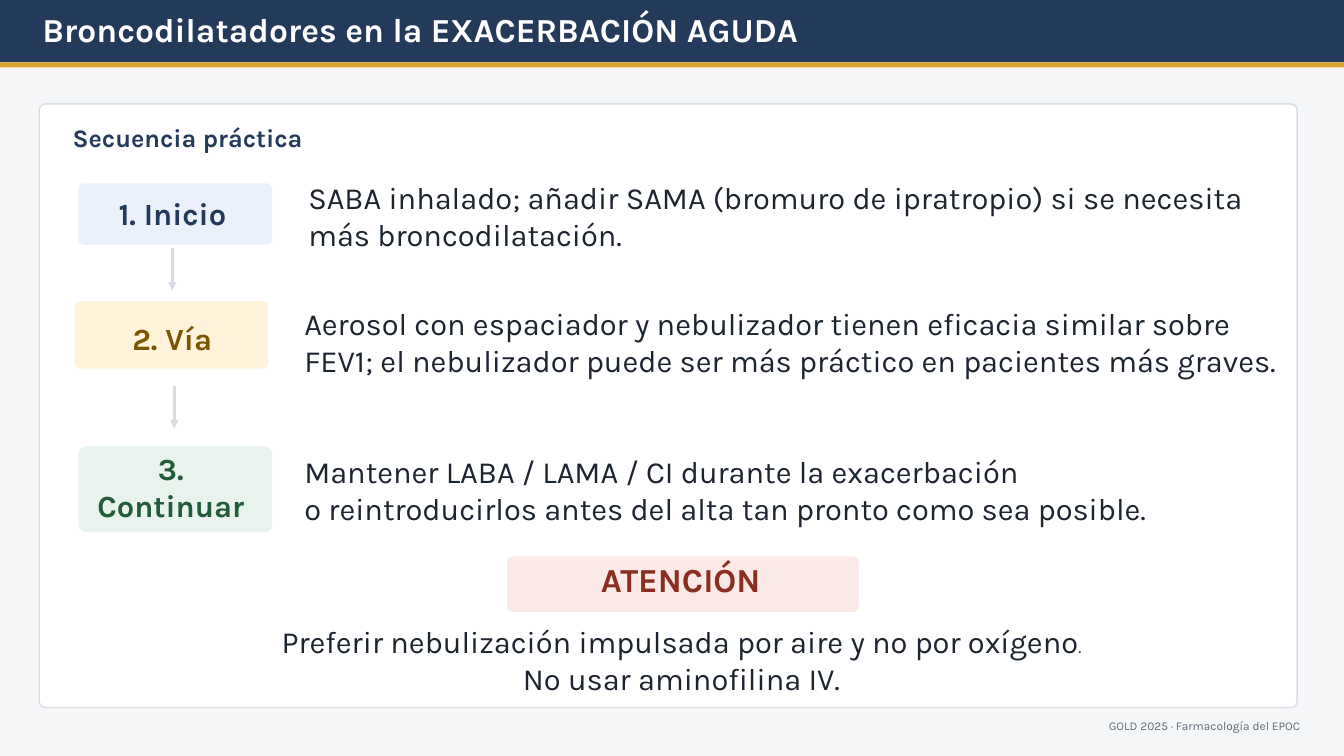
from lxml import etree
from pptx import Presentation
from pptx.dml.color import RGBColor
from pptx.enum.shapes import MSO_CONNECTOR, MSO_SHAPE
from pptx.enum.text import MSO_ANCHOR, PP_ALIGN
from pptx.oxml.ns import qn
from pptx.util import Cm, Pt

RECT, ROUNDED = MSO_SHAPE.RECTANGLE, MSO_SHAPE.ROUNDED_RECTANGLE
LEFT, CENTER, RIGHT = PP_ALIGN.LEFT, PP_ALIGN.CENTER, PP_ALIGN.RIGHT
MIDDLE = MSO_ANCHOR.MIDDLE
STRAIGHT = MSO_CONNECTOR.STRAIGHT
FONT = "Karla"
COLORS = {
    "background": "F5F6F7", "navy": "243A5A", "gold": "D8A32F", "white": "FFFFFF",
    "border": "D9DDE3", "body": "1C2430", "footer": "5F6B78",
    "blue": "EAF1FA", "yellow": "FFF4DB", "brown": "7A5600",
    "mint": "E7F3EC", "green": "235C39", "pink": "FBE9E7", "red": "8A2E1F",
}
COLORS = {name: RGBColor.from_string(value) for name, value in COLORS.items()}


def add_panel(place, fill, kind=ROUNDED, corner=0.088):
    panel = page.shapes.add_shape(kind, *map(Cm, place))
    panel.shadow.inherit = False
    panel.fill.solid()
    panel.fill.fore_color.rgb = COLORS[fill]
    panel.line.fill.background()
    if kind == ROUNDED:
        panel.adjustments[0] = corner
    return panel


def add_text(place, text, size, color, bold=False, align=LEFT):
    """Add a box without margins; each line of text becomes a paragraph."""
    frame = page.shapes.add_textbox(*map(Cm, place)).text_frame
    frame.word_wrap = True
    frame.vertical_anchor = MIDDLE
    frame.margin_left = frame.margin_top = frame.margin_right = frame.margin_bottom = 0
    frame.text = text
    for paragraph in frame.paragraphs:
        paragraph.alignment = align
        for span in paragraph.runs:
            span.font.name = FONT
            span.font.size = Pt(size)
            span.font.bold = bold
            span.font.color.rgb = COLORS[color]
    return frame


deck = Presentation()
deck.slide_width, deck.slide_height = Cm(33.87), Cm(19.05)
page = deck.slides.add_slide(deck.slide_layouts[6])
page.background.fill.solid()
page.background.fill.fore_color.rgb = COLORS["background"]

# Header and footer
add_panel((0, 0, 33.87, 1.57), "navy", RECT)
add_text((1.07, 0.41, 22.35, 0.66), "Broncodilatadores en la EXACERBACIÓN AGUDA",
         24, "white", bold=True)
add_panel((0, 1.57, 33.87, 0.13), "gold", RECT)
add_text((25.91, 18.08, 6.86, 0.41), "GOLD 2025 · Farmacología del EPOC",
         8.5, "footer", align=RIGHT)

# Card
card = add_panel((0.99, 2.62, 31.7, 15.21), "white", corner=0.01)
card.line.color.rgb = COLORS["border"]
card.line.width = Pt(1)
add_text((1.83, 3.23, 5.84, 0.46), "Secuencia práctica", 18, "navy", bold=True)

# Steps: panel, fill, label place, label, label colour, text place, text
steps = [
    ((1.98, 4.62, 4.88, 1.55), "blue", (2.67, 5.08, 3.35, 0.58), "1. Inicio", "navy",
     (7.77, 4.62, 24, 1.63),
     "SABA inhalado; añadir SAMA (bromuro de ipratropio) si se necesita "
     "más broncodilatación."),
    ((1.88, 7.59, 4.88, 1.7), "yellow", (2.36, 8.13, 3.96, 0.76), "2. Vía", "brown",
     (7.67, 7.11, 25.02, 3),
     "Aerosol con espaciador y nebulizador tienen eficacia similar sobre FEV1; "
     "el nebulizador puede ser más práctico en pacientes más graves."),
    ((1.98, 11.25, 4.88, 2.16), "mint", (2.26, 11.66, 4.09, 1.19), "3. Continuar", "green",
     (7.67, 11.25, 24, 2.16),
     "Mantener LABA / LAMA / CI durante la exacerbación\n"
     "o reintroducirlos antes del alta tan pronto como sea posible."),
]
for panel_place, fill, label_place, label, color, text_place, text in steps:
    add_panel(panel_place, fill)
    add_text(label_place, label, 22, color, bold=True, align=CENTER)
    add_text(text_place, text, 22, "body")

# Warning
add_panel((12.78, 14.02, 8.86, 1.4), "pink")
add_text((13.36, 14.12, 7.59, 0.94), "ATENCIÓN", 24, "red", bold=True, align=CENTER)
warning = add_text((2.67, 15.88, 29.01, 1.47),
                   "Preferir nebulización impulsada por aire y no por oxígeno\n"
                   "No usar aminofilina IV.", 22, "body", align=CENTER)
period = warning.paragraphs[0].add_run()
period.text = "."
period.font.name = FONT
period.font.size = Pt(12.7)
period.font.color.rgb = COLORS["body"]

# Arrows between steps
for x, top in [(4.34, 6.25), (4.39, 9.73)]:
    arrow = page.shapes.add_connector(STRAIGHT, Cm(x), Cm(top), Cm(x), Cm(top + 1.07))
    arrow.line.color.rgb = COLORS["border"]
    arrow.line.width = Pt(2)
    etree.SubElement(arrow.line._get_or_add_ln(), qn("a:tailEnd"), type="triangle")
    etree.SubElement(arrow._element.spPr, qn("a:effectLst"))

deck.save("out.pptx")
